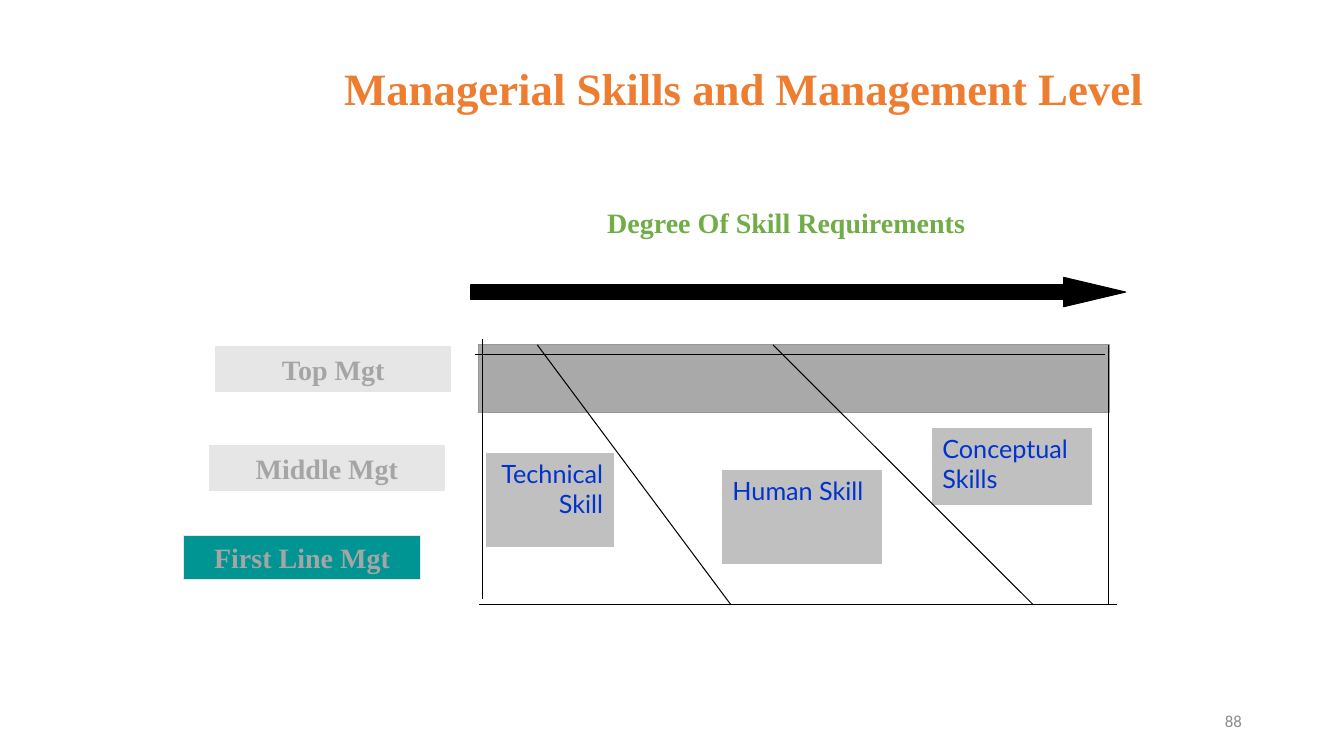
from lxml import etree
from pptx import Presentation
from pptx import util as u
from pptx.dml.color import RGBColor
from pptx.enum import shapes, text
from pptx.oxml import ns

HUES = {
    "black": "000000", "white": "FFFFFF", "band": "A9A9A9", "edge": "969696",
    "pale": "E7E6E6", "teal": "009592", "box": "C0C0C0", "blue": "0033CC",
    "grey": "A5A5A5", "dim": "8C8C8C", "green": "70AD47", "orange": "ED7D31",
}
SERIF = "Times New Roman"
MID = text.MSO_ANCHOR.MIDDLE
LEFT, CENTER, RIGHT = (text.PP_ALIGN.LEFT, text.PP_ALIGN.CENTER,
                       text.PP_ALIGN.RIGHT)
LEVELS = [
    ("Top Mgt", (5.44, 8.74, 5.92, 1.12), "pale"),
    ("Middle Mgt", (5.28, 11.23, 5.92, 1.12), "pale"),
    ("First Line Mgt", (4.62, 13.49, 5.99, 1.12), "teal"),
]
SKILLS = [
    ("Technical Skill", (12.27, 11.43, 3.18, 2.34), RIGHT),
    ("Human Skill", (18.21, 11.86, 4.01, 2.34), LEFT),
    ("Conceptual Skills", (23.5, 10.8, 4.01, 1.91), LEFT),
]
TOP, BASE, END = 8.69, 15.24, 27.94
LINES = [
    (12.17, 8.53, 12.17, 15.09),
    (13.54, TOP, 18.42, BASE),
    (END, TOP, END, BASE),
    (19.48, TOP, 26.04, BASE),
    (11.96, 8.94, 27.84, 8.94),
    (12.07, BASE, 28.14, BASE),
]


def rgb(name):
    return RGBColor.from_string(HUES[name])


def cm(*sizes):
    return [u.Cm(size) for size in sizes]


def write(shape, words, size, font, hue, align=CENTER, bold=False,
          anchor=MID, wrap=True):
    frame = shape.text_frame
    frame.word_wrap = wrap
    frame.auto_size = text.MSO_AUTO_SIZE.NONE
    frame.vertical_anchor = anchor
    para = frame.paragraphs[0]
    para.alignment = align
    run = para.add_run()
    run.text = words
    run.font.size = u.Pt(size)
    run.font.name = font
    run.font.bold = bold
    run.font.color.rgb = rgb(hue)


def paint(shape, fill, edge):
    shape.fill.solid()
    shape.fill.fore_color.rgb = rgb(fill)
    shape.line.color.rgb = rgb(edge)
    shape.line.width = u.Pt(0.75)


def block(slide, box, fill, edge, kind=shapes.MSO_SHAPE.RECTANGLE):
    shape = slide.shapes.add_shape(kind, *cm(*box))
    shape.shadow.inherit = False
    paint(shape, fill, edge)
    return shape


def rule(slide, ends):
    line = slide.shapes.add_connector(shapes.MSO_CONNECTOR.STRAIGHT, *cm(*ends))
    line.line.color.rgb = rgb("black")
    line.line.width = u.Pt(0.75)
    etree.SubElement(line._element.spPr, ns.qn("a:effectLst"))


def head(slide, words):
    title = slide.shapes.title
    title.left, title.top, title.width, title.height = cm(8.41, 1.4, 20.68, 1.63)
    paint(title, "white", "white")
    write(title, words, 32, SERIF, "orange", bold=True, wrap=False)


def main():
    deck = Presentation()
    deck.slide_width, deck.slide_height = cm(33.87, 19.05)
    slide = deck.slides.add_slide(deck.slide_layouts[5])
    head(slide, "Managerial Skills and Management Level")

    block(slide, (12.07, TOP, 15.88, 1.7), "band", "edge")
    arrow = block(slide, (11.86, 6.99, 16.51, 0.74), "black", "black",
                  shapes.MSO_SHAPE.RIGHT_ARROW)
    arrow.adjustments[1] = 2.11
    degree = block(slide, (15.04, 5.05, 9.55, 1.12), "white", "white")
    write(degree, "Degree Of Skill Requirements", 20, SERIF, "green",
          bold=True, wrap=False)

    for words, box, fill in LEVELS:
        level = block(slide, box, fill, "pale")
        write(level, words, 20, SERIF, "grey", bold=True)
    for words, box, align in SKILLS:
        skill = block(slide, box, "box", "box")
        write(skill, words, 18, "Lato", "blue", align,
              anchor=text.MSO_ANCHOR.TOP)
    for ends in LINES:
        rule(slide, ends)

    page = slide.shapes.add_textbox(*cm(23.93, 17.65, 7.62, 1.02))
    write(page, "88", 12, "Calibri", "dim", RIGHT)
    deck.save("out.pptx")


if __name__ == "__main__":
    main()
